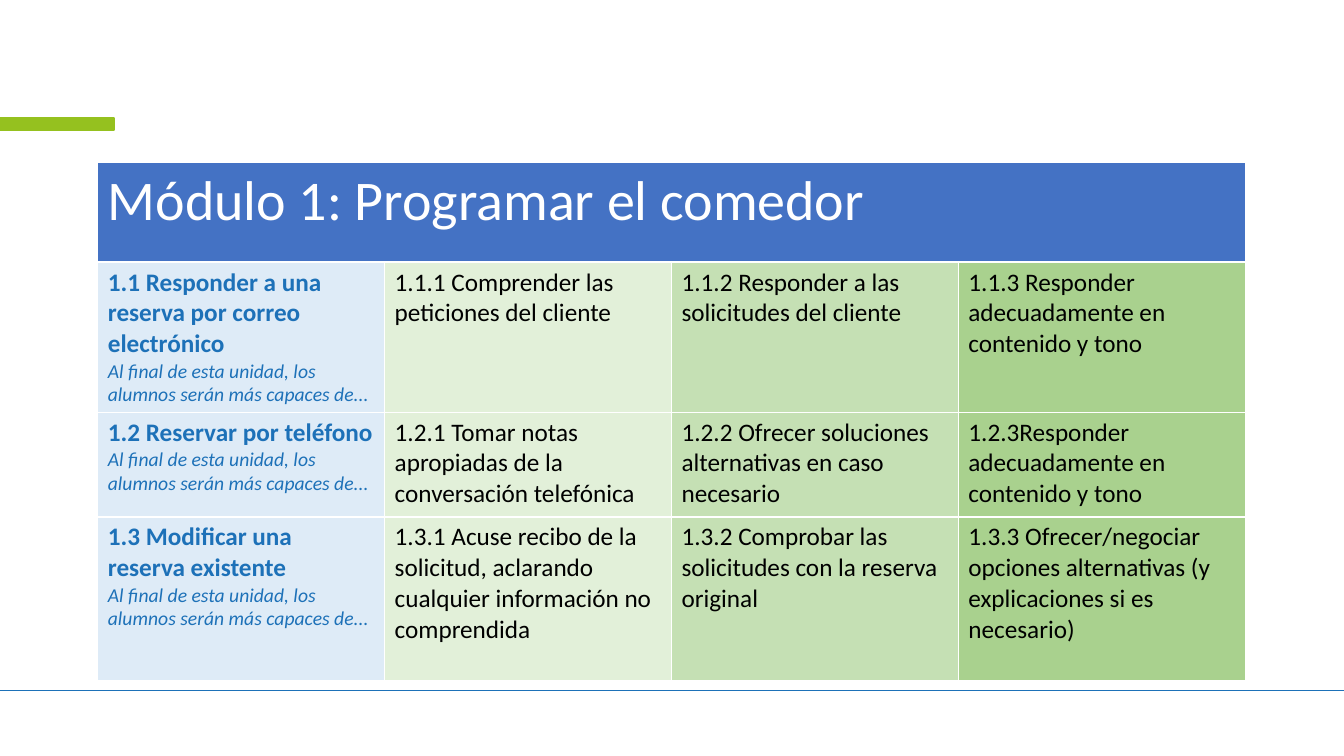
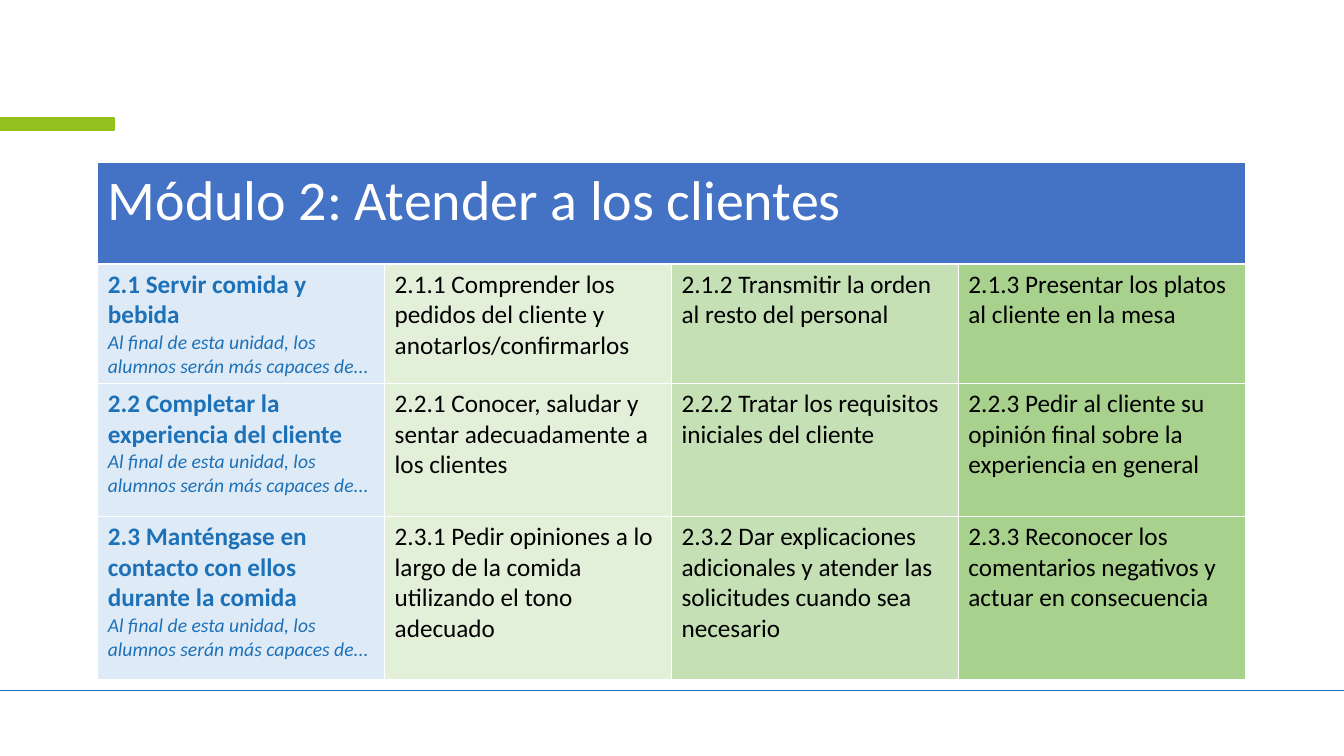
"""Build two slides that list the units and goals of the hospitality course modules."""
from pptx import Presentation
from pptx.dml.color import RGBColor
from pptx.enum.shapes import MSO_CONNECTOR, MSO_SHAPE
from pptx.oxml import parse_xml
from pptx.oxml.ns import nsdecls
from pptx.util import Inches, Pt

RECTANGLE = MSO_SHAPE.RECTANGLE
STRAIGHT = MSO_CONNECTOR.STRAIGHT

WHITE = RGBColor(0xFF, 0xFF, 0xFF)
BLACK = RGBColor(0x00, 0x00, 0x00)
BLUE = RGBColor(0x1D, 0x71, 0xB8)
GREEN = RGBColor(0x95, 0xC1, 0x1F)
HEADER_FILL = RGBColor(0x44, 0x72, 0xC4)
COLUMN_FILLS = [
    RGBColor(0xDE, 0xEB, 0xF7),
    RGBColor(0xE2, 0xF0, 0xD9),
    RGBColor(0xC5, 0xE0, 0xB4),
    RGBColor(0xA9, 0xD1, 0x8E),
]
FONT = "Calibri"
UNIT_NOTE = "Al final de esta unidad, los alumnos serán más capaces de..."

MODULES = [
    ("Módulo 1: Programar el comedor", [0.99, 1.48, 1.04, 1.62], [
        ["1.1 Responder a una reserva por correo electrónico",
         "1.1.1 Comprender las peticiones del cliente",
         "1.1.2 Responder a las solicitudes del cliente",
         "1.1.3 Responder adecuadamente en contenido y tono"],
        ["1.2 Reservar por teléfono",
         "1.2.1 Tomar notas apropiadas de la conversación telefónica",
         "1.2.2 Ofrecer soluciones alternativas en caso necesario",
         "1.2.3Responder adecuadamente en contenido y tono"],
        ["1.3 Modificar una reserva existente",
         "1.3.1 Acuse recibo de la solicitud, aclarando cualquier información no comprendida",
         "1.3.2 Comprobar las solicitudes con la reserva original",
         "1.3.3 Ofrecer/negociar opciones alternativas (y explicaciones si es necesario)"],
    ]),
    ("Módulo 2: Atender a los clientes", [1.01, 1.18, 1.32, 1.62], [
        ["2.1 Servir comida y bebida",
         "2.1.1 Comprender los pedidos del cliente y anotarlos/confirmarlos",
         "2.1.2 Transmitir la orden al resto del personal",
         "2.1.3 Presentar los platos al cliente en la mesa"],
        ["2.2 Completar la experiencia del cliente",
         "2.2.1 Conocer, saludar y sentar adecuadamente a los clientes",
         "2.2.2 Tratar los requisitos iniciales del cliente",
         "2.2.3 Pedir al cliente su opinión final sobre la experiencia en general"],
        ["2.3 Manténgase en contacto con ellos durante la comida",
         "2.3.1 Pedir opiniones a lo largo de la comida utilizando el tono adecuado",
         "2.3.2 Dar explicaciones adicionales y atender las solicitudes cuando sea necesario",
         "2.3.3 Reconocer los comentarios negativos y actuar en consecuencia"],
    ]),
]


def write_text(paragraph, text, size=18, color=BLACK, bold=False, italic=False):
    run = paragraph.add_run()
    run.text = text
    run.font.name = FONT
    run.font.size = Pt(size)
    run.font.color.rgb = color
    run.font.bold = bold
    run.font.italic = italic


def style_cell(cell, fill):
    properties = cell._tc.get_or_add_tcPr()
    for side in ("lnL", "lnR", "lnT", "lnB"):
        properties.append(parse_xml(
            f'<a:{side} {nsdecls("a")} w="{Pt(1)}"><a:solidFill>'
            f'<a:srgbClr val="{WHITE}"/></a:solidFill></a:{side}>'))
    cell.fill.solid()
    cell.fill.fore_color.rgb = fill


prs = Presentation()
prs.slide_width = Inches(13.33)
prs.slide_height = Inches(7.5)
blank_layout = prs.slide_layouts[6]

for module_title, row_heights, units in MODULES:
    slide = prs.slides.add_slide(blank_layout)

    footer_rule = slide.shapes.add_connector(
        STRAIGHT, 0, Inches(6.85), prs.slide_width, Inches(6.85))
    footer_rule.line.color.rgb = BLUE
    footer_rule.line.width = Pt(1)
    footer_rule._element.spPr.append(parse_xml(f'<a:effectLst {nsdecls("a")}/>'))

    accent_band = slide.shapes.add_shape(
        RECTANGLE, 0, Inches(1.17), Inches(1.13), Inches(0.12))
    accent_band.shadow.inherit = False
    accent_band.fill.solid()
    accent_band.fill.fore_color.rgb = GREEN
    accent_band.line.color.rgb = GREEN
    accent_band.line.width = Pt(1)

    module_table = slide.shapes.add_table(
        len(row_heights), len(COLUMN_FILLS), Inches(0.97), Inches(1.61),
        Inches(11.38), Inches(sum(row_heights))).table
    for row, height in zip(module_table.rows, row_heights):
        row.height = Inches(height)

    for header_cell in module_table.rows[0].cells:
        style_cell(header_cell, HEADER_FILL)
    module_header = module_table.cell(0, 0)
    module_header.merge(module_table.cell(0, len(COLUMN_FILLS) - 1))
    write_text(module_header.text_frame.paragraphs[0], module_title, size=40, color=WHITE)

    for row_index, unit in enumerate(units, start=1):
        for column, (text, fill) in enumerate(zip(unit, COLUMN_FILLS)):
            cell = module_table.cell(row_index, column)
            style_cell(cell, fill)
            frame = cell.text_frame
            if column == 0:
                write_text(frame.paragraphs[0], text, color=BLUE, bold=True)
                write_text(frame.add_paragraph(), UNIT_NOTE, size=14, color=BLUE, italic=True)
            else:
                write_text(frame.paragraphs[0], text)

prs.save("out.pptx")
